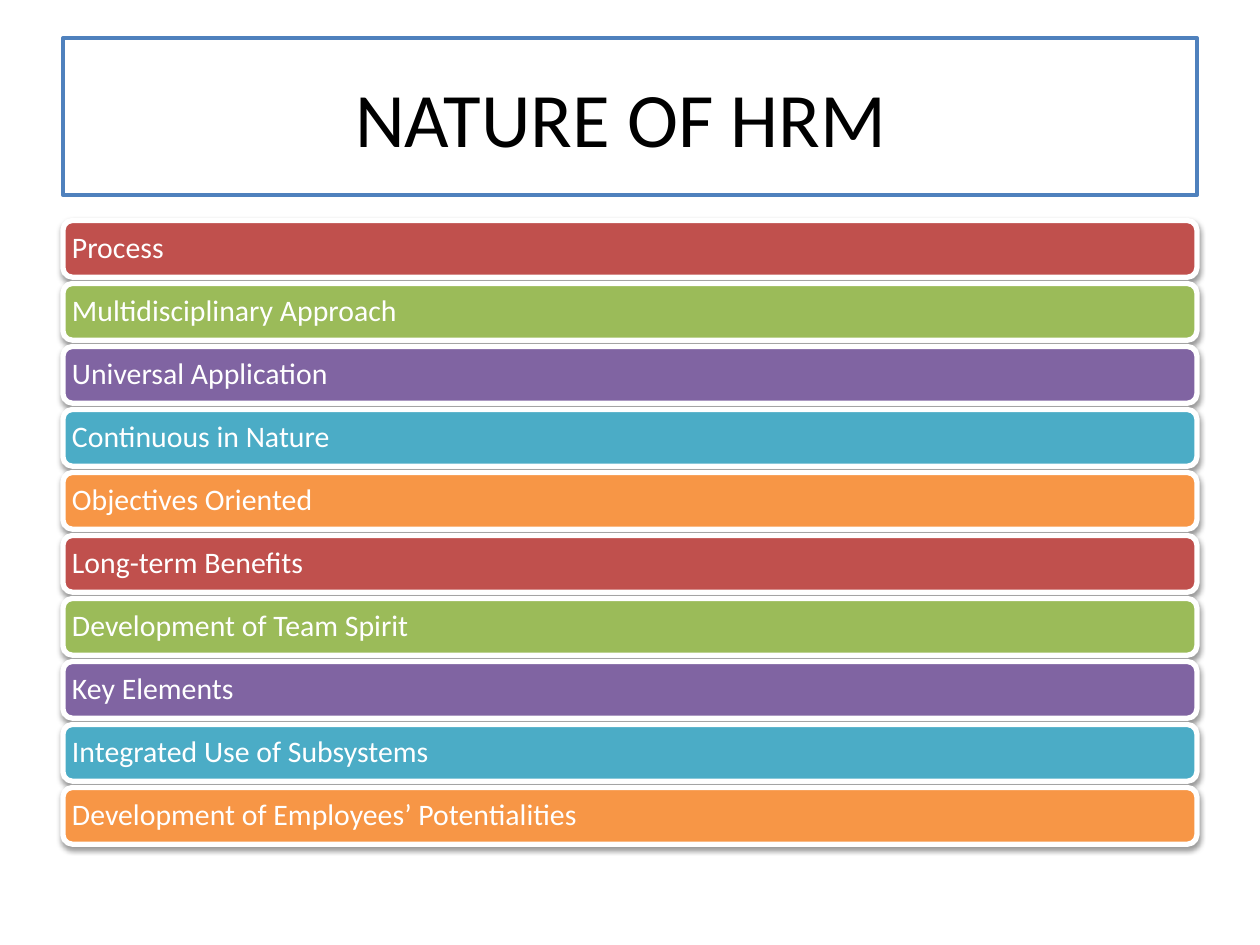
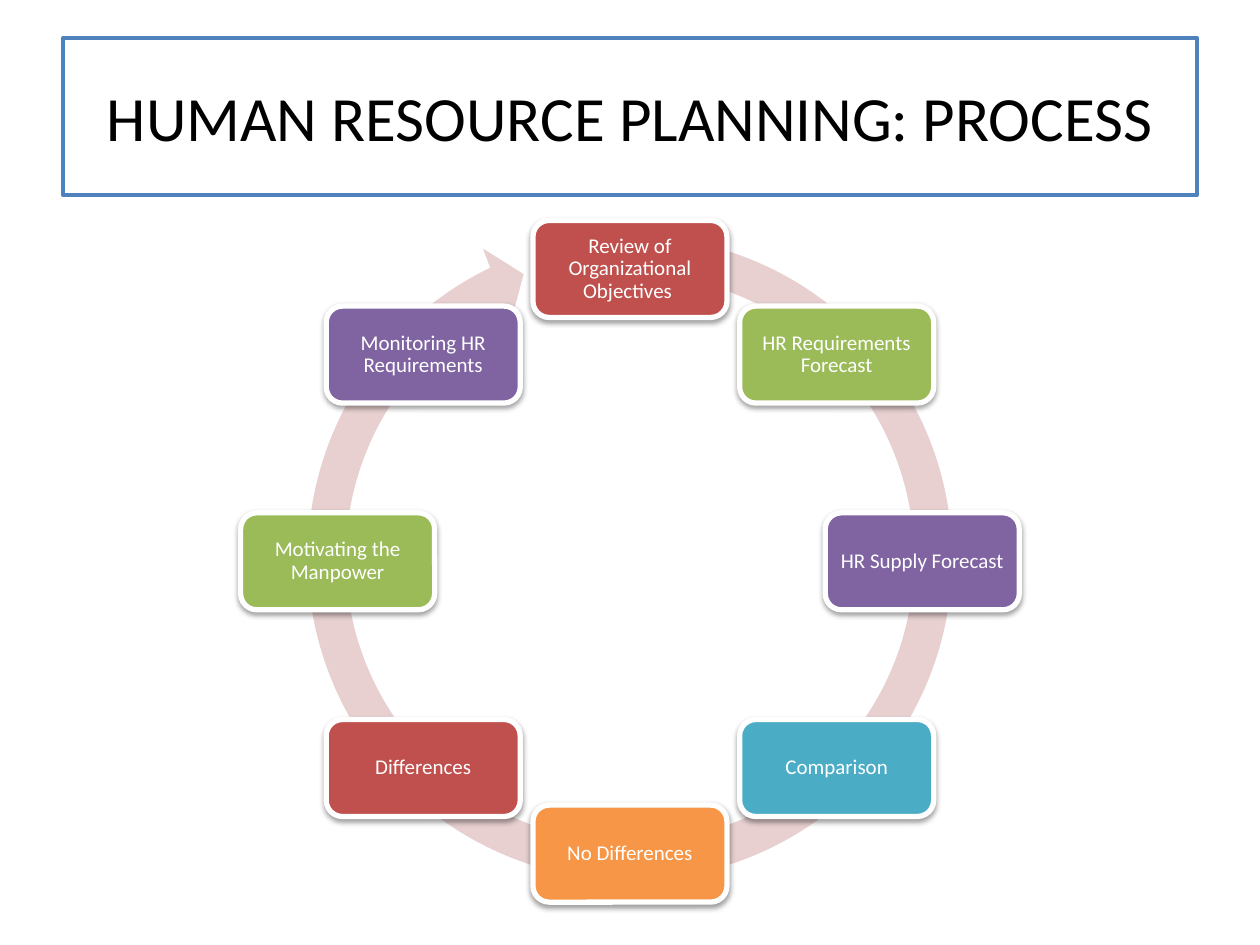
import math

import pptx
import pptx.dml.color
import pptx.enum.shapes
import pptx.enum.text
import pptx.oxml
import pptx.oxml.ns
import pptx.util
from pptx.util import Inches

# Content
NATURE_TITLE = "NATURE OF HRM "
NATURE_POINTS = [
    "Process",
    "Multidisciplinary Approach",
    "Universal Application",
    "Continuous in Nature",
    "Objectives Oriented",
    "Long-term Benefits",
    "Development of Team Spirit",
    "Key Elements",
    "Integrated Use of Subsystems",
    "Development of Employees’ Potentialities",
]
PLANNING_TITLE = "HUMAN RESOURCE PLANNING: PROCESS"
PLANNING_STEPS = [
    "Review of Organizational Objectives ",
    "HR Requirements Forecast",
    "HR Supply Forecast",
    "Comparison",
    "No Differences",
    "Differences",
    "Motivating the Manpower",
    "Monitoring HR Requirements",
]

# Shared style
FONT = "Calibri"
COLORS = {
    "title_border": "4F81BD",
    "title_text": "000000",
    "white": "FFFFFF",
    "ring": "E8D0D0",
    "red": "C0504D",
    "green": "9BBB59",
    "purple": "8064A2",
    "teal": "4BACC6",
    "orange": "F79646",
}
CARD_COLORS = ["red", "green", "purple", "teal", "orange"]
SHAPES = pptx.enum.shapes.MSO_SHAPE
ALIGN = pptx.enum.text.PP_ALIGN
SHADOW_XML = (
    f"<a:outerShdw {pptx.oxml.ns.nsdecls('a')} blurRad='40000' dist='20000' "
    "dir='5400000' rotWithShape='0'><a:srgbClr val='000000'>"
    "<a:alpha val='38000'/></a:srgbClr></a:outerShdw>"
)

# Layout, in inches
MARGIN, CONTENT_WIDTH = 0.5, 9
BAR_TOP, BAR_HEIGHT, BAR_PITCH = 1.75, 0.45, 0.5
STEP_WIDTH, STEP_HEIGHT = 1.54, 0.77
CYCLE_X, CYCLE_Y, CYCLE_RADIUS = 5, 4.455, 2.32
RING_LEFT, RING_TOP, RING_SIZE = 2.28, 1.71, 5.44
# Thickness and head length in percent, angles in degrees
RING_THICKNESS, RING_HEAD = 5.54, 5.76
RING_ANGLES = [5.51, 243.97, 281.35]


def rgb(name):
    return pptx.dml.color.RGBColor.from_string(COLORS[name])


def add_filled_shape(slide, kind, box, fill, line=None, line_width=0):
    shape = slide.shapes.add_shape(kind, *map(Inches, box))
    shape.shadow.inherit = False
    shape.fill.solid()
    shape.fill.fore_color.rgb = rgb(fill)
    if line:
        shape.line.color.rgb = rgb(line)
        shape.line.width = pptx.util.Pt(line_width)
    else:
        shape.line.fill.background()
    return shape


def write_text(shape, text, size, color, align):
    frame = shape.text_frame
    frame.text = text
    frame.word_wrap = True
    frame.vertical_anchor = pptx.enum.text.MSO_ANCHOR.MIDDLE
    paragraph = frame.paragraphs[0]
    paragraph.alignment = align
    font = paragraph.runs[0].font
    font.name, font.size = FONT, pptx.util.Pt(size)
    font.color.rgb = rgb(color)


def add_titled_slide(presentation, title, size):
    slide = presentation.slides.add_slide(presentation.slide_layouts[6])
    banner = add_filled_shape(slide, SHAPES.RECTANGLE, (MARGIN, 0.3, CONTENT_WIDTH, 1.25),
                              "white", "title_border", 2)
    write_text(banner, title, size, "title_text", ALIGN.CENTER)
    return slide


def add_card(slide, index, text, box, size, align, inset):
    fill = CARD_COLORS[index % len(CARD_COLORS)]
    card = add_filled_shape(slide, SHAPES.ROUNDED_RECTANGLE, box, fill, "white", 3)
    effects = card.element.spPr.find(pptx.oxml.ns.qn("a:effectLst"))
    effects.append(pptx.oxml.parse_xml(SHADOW_XML))
    write_text(card, text, size, "white", align)
    frame = card.text_frame
    frame.margin_left = frame.margin_right = Inches(inset)
    frame.margin_top = frame.margin_bottom = Inches(inset)
    frame.paragraphs[0].line_spacing = 0.9


def build_nature_slide(presentation):
    slide = add_titled_slide(presentation, NATURE_TITLE, 44)
    for index, point in enumerate(NATURE_POINTS):
        box = (MARGIN, BAR_TOP + index * BAR_PITCH, CONTENT_WIDTH, BAR_HEIGHT)
        add_card(slide, index, point, box, 17, ALIGN.LEFT, 0.05)


def build_planning_slide(presentation):
    slide = add_titled_slide(presentation, PLANNING_TITLE, 36)

    # Ring arrow behind the steps
    ring = add_filled_shape(slide, SHAPES.CIRCULAR_ARROW,
                            (RING_LEFT, RING_TOP, RING_SIZE, RING_SIZE), "ring")
    angles = [degrees * 60000 / 100000 for degrees in RING_ANGLES]
    settings = [RING_THICKNESS / 100, *angles, RING_HEAD / 100]
    for index, value in enumerate(settings):
        ring.adjustments[index] = value

    # Steps clockwise from the top
    for index, step in enumerate(PLANNING_STEPS):
        angle = 2 * math.pi * index / len(PLANNING_STEPS)
        left = CYCLE_X + CYCLE_RADIUS * math.sin(angle) - STEP_WIDTH / 2
        top = CYCLE_Y - CYCLE_RADIUS * math.cos(angle) - STEP_HEIGHT / 2
        add_card(slide, index, step, (left, top, STEP_WIDTH, STEP_HEIGHT),
                 12, ALIGN.CENTER, 0.01)


def main():
    presentation = pptx.Presentation()
    presentation.slide_width = Inches(10)
    presentation.slide_height = Inches(7.5)
    build_nature_slide(presentation)
    build_planning_slide(presentation)
    presentation.save("out.pptx")


if __name__ == "__main__":
    main()
